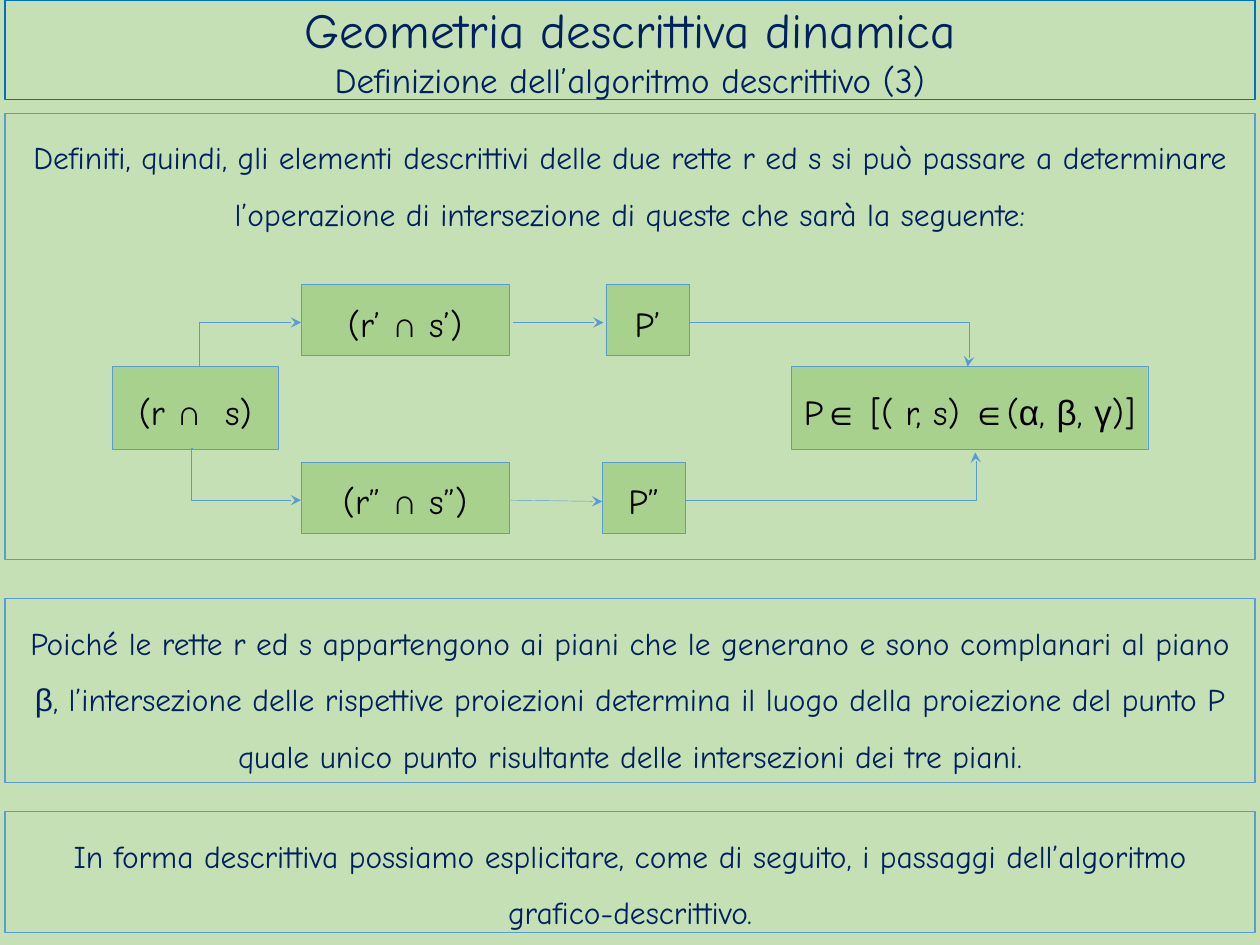
from itertools import groupby

from lxml import etree
from pptx import Presentation
from pptx.dml.color import RGBColor
from pptx.enum.shapes import MSO_CONNECTOR, MSO_SHAPE
from pptx.enum.text import MSO_ANCHOR, PP_ALIGN
from pptx.oxml.ns import qn
from pptx.util import Inches, Pt

BACKGROUND = RGBColor(0xC5, 0xE0, 0xB4)
NODE_GREEN = RGBColor(0xA9, 0xD1, 0x8E)
LINE_BLUE = RGBColor(0x5B, 0x9B, 0xD5)
TITLE_BLUE = RGBColor(0x00, 0x70, 0xC0)
NAVY = RGBColor(0x00, 0x20, 0x60)
BLACK = RGBColor(0x00, 0x00, 0x00)
SYMBOLS = "∩∈αβγ"
PANEL_LEFT, PANEL_WIDTH = 0.04, 9.92


def add_box(left, top, width, height, line_color, line_width, fill=None):
    box = page.shapes.add_shape(MSO_SHAPE.RECTANGLE, Inches(left), Inches(top),
                                Inches(width), Inches(height))
    box.shadow.inherit = False
    box.line.color.rgb = line_color
    box.line.width = Pt(line_width)
    if fill is None:
        box.fill.background()
    else:
        box.fill.solid()
        box.fill.fore_color.rgb = fill
    box.text_frame.word_wrap = True
    return box


def write(paragraph, text, size, color, spacing=1.0):
    """Fill a centred paragraph, with Greek and set symbols in Arial."""
    paragraph.alignment = PP_ALIGN.CENTER
    paragraph.line_spacing = spacing
    for is_symbol, letters in groupby(text, lambda letter: letter in SYMBOLS):
        span = paragraph.add_run()
        span.text = "".join(letters)
        span.font.name = "Arial" if is_symbol else "Comic Neue"
        span.font.size = Pt(size)
        span.font.color.rgb = color


deck = Presentation()
deck.slide_width, deck.slide_height = Inches(10), Inches(7.5)
page = deck.slides.add_slide(deck.slide_layouts[6])
page.background.fill.solid()
page.background.fill.fore_color.rgb = BACKGROUND

title = add_box(PANEL_LEFT, 0, PANEL_WIDTH, 0.79, TITLE_BLUE, 1)
title.text_frame.vertical_anchor = MSO_ANCHOR.MIDDLE
write(title.text_frame.paragraphs[0], "Geometria descrittiva dinamica", 28, NAVY)
write(title.text_frame.add_paragraph(),
      "Definizione dell’algoritmo descrittivo (3)", 20, NAVY)

panels = [
    (0.9, 3.54, "Definiti, quindi, gli elementi descrittivi delle due rette r ed s "
                "si può passare a determinare l’operazione di intersezione di queste "
                "che sarà la seguente:"),
    (4.75, 1.46, "Poiché le rette r ed s appartengono ai piani che le generano e sono "
                 "complanari al piano β, l’intersezione delle rispettive proiezioni "
                 "determina il luogo della proiezione del punto P quale unico punto "
                 "risultante delle intersezioni dei tre piani."),
    (6.44, 0.96, "In forma descrittiva possiamo esplicitare, come di seguito, i passaggi "
                 "dell’algoritmo grafico-descrittivo."),
]
for top, height, text in panels:
    panel = add_box(PANEL_LEFT, top, PANEL_WIDTH, height, LINE_BLUE, 0.75)
    panel.text_frame.vertical_anchor = MSO_ANCHOR.TOP
    write(panel.text_frame.paragraphs[0], text, 18, NAVY, 1.5)

nodes = [
    (0.89, 2.91, 1.32, 0.66, "(r ∩  s)"),
    (2.39, 2.26, 1.65, 0.56, "(r’ ∩ s’)"),
    (4.81, 2.26, 0.66, 0.56, "P’"),
    (2.39, 3.67, 1.65, 0.56, "(r” ∩ s”)"),
    (4.78, 3.67, 0.66, 0.56, "P”"),
    (6.28, 2.91, 2.83, 0.66, "P∈ [( r, s) ∈(α, β, γ)]"),
]
for left, top, width, height, text in nodes:
    node = add_box(left, top, width, height, LINE_BLUE, 0.25, NODE_GREEN)
    node.text_frame.vertical_anchor = MSO_ANCHOR.MIDDLE
    paragraph = node.text_frame.paragraphs[0]
    write(paragraph, text, 20, BLACK, 1.15)
    paragraph.space_after = Pt(10)

# Start, end and, for an elbow, the place of its bend in 1/100000 of the width
arrows = [
    (1.59, 2.91, 2.39, 2.56, -1100),
    (4.07, 2.56, 4.79, 2.56, None),
    (5.48, 2.56, 7.68, 2.91, 100500),
    (1.53, 3.56, 2.39, 3.97, -1000),
    (4.05, 3.97, 4.78, 3.98, None),
    (5.44, 3.97, 7.74, 3.59, 100200),
]
for start_x, start_y, end_x, end_y, bend in arrows:
    kind = MSO_CONNECTOR.STRAIGHT if bend is None else MSO_CONNECTOR.ELBOW
    arrow = page.shapes.add_connector(kind, Inches(start_x), Inches(start_y),
                                      Inches(end_x), Inches(end_y))
    arrow.line.color.rgb = LINE_BLUE
    arrow.line.width = Pt(0.25)
    properties = arrow._element.spPr
    etree.SubElement(properties.find(qn("a:ln")), qn("a:tailEnd"), type="stealth")
    etree.SubElement(properties, qn("a:effectLst"))
    if bend is not None:
        guides = properties.find(qn("a:prstGeom")).find(qn("a:avLst"))
        etree.SubElement(guides, qn("a:gd"), name="adj1", fmla=f"val {bend}")

deck.save("out.pptx")
